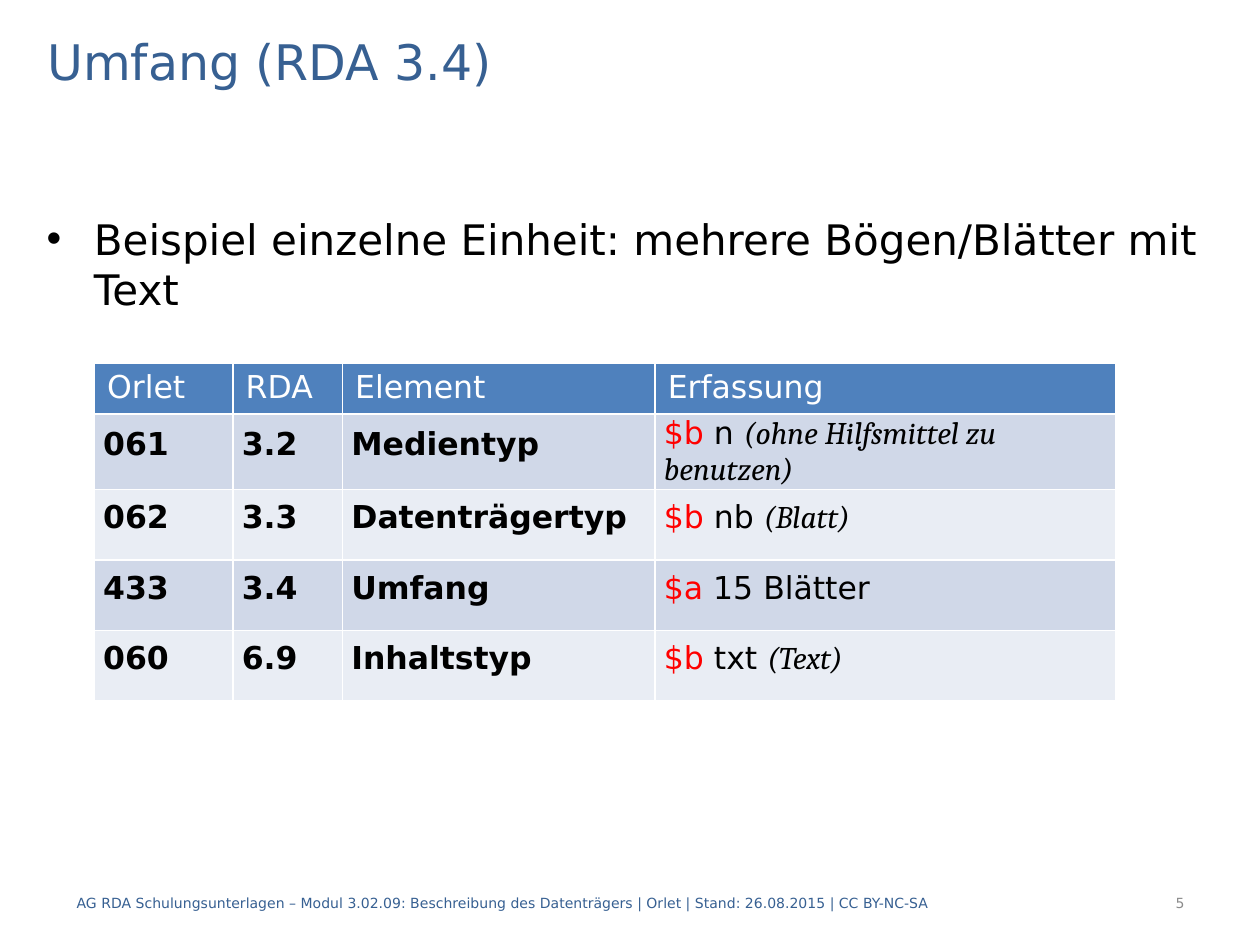
from dataclasses import dataclass

from pptx import Presentation
from pptx.dml.color import RGBColor
from pptx.enum.text import MSO_ANCHOR, PP_ALIGN
from pptx.oxml.ns import qn
from pptx.util import Pt
from lxml import etree

TOP, MIDDLE = MSO_ANCHOR.TOP, MSO_ANCHOR.MIDDLE
LEFT, RIGHT = PP_ALIGN.LEFT, PP_ALIGN.RIGHT


@dataclass(frozen=True)
class Theme:
    """Colours, fonts and type sizes of the slide."""
    font: str = "DejaVu Sans"
    note_font: str = "Cambria"
    title: str = "376092"
    text: str = "000000"
    subfield: str = "FF0000"
    page: str = "8C8C8C"
    white: str = "FFFFFF"
    header: str = "4F81BD"
    bands: tuple = ("D0D8E8", "E9EDF4")
    title_size: int = 28
    body_size: int = 24
    table_size: int = 18
    footer_size: int = 8


THEME = Theme()
COLUMNS = (79.2, 62.6, 178.6, 263.5)
HEADER_HEIGHT, ROW_HEIGHT = 28, 40.3
HEADERS = ("Orlet", "RDA", "Element", "Erfassung")
ROWS = (
    ("061", "3.2", "Medientyp", ("$b", " n ", "(ohne Hilfsmittel zu benutzen)")),
    ("062", "3.3", "Datenträgertyp", ("$b ", "nb ", "(Blatt)")),
    ("433", "3.4", "Umfang", ("$a", " 15 Blätter")),
    ("060", "6.9", "Inhaltstyp", ("$b ", "txt ", "(Text)")),
)


def style_run(r, size, color, font=THEME.font, bold=False, italic=False):
    """Format one run."""
    r.font.size, r.font.name = Pt(size), font
    r.font.bold, r.font.italic = bold, italic
    r.font.color.rgb = RGBColor.from_string(color)


def add_text(s, box, text, size, color, anchor=MIDDLE, align=LEFT):
    """Add a wrapped one-paragraph text box and return its frame."""
    tf = s.shapes.add_textbox(*map(Pt, box)).text_frame
    tf.word_wrap, tf.vertical_anchor = True, anchor
    p = tf.paragraphs[0]
    p.text, p.alignment = text, align
    style_run(p.runs[0], size, color)
    return tf


def add_bullet(p, indent):
    """Give a paragraph a hanging bullet."""
    ppr = p._p.get_or_add_pPr()
    ppr.set("marL", str(Pt(indent)))
    ppr.set("indent", str(-Pt(indent)))
    etree.SubElement(ppr, qn("a:buFont"), typeface="Arial")
    etree.SubElement(ppr, qn("a:buChar"), char="•")


def paint_cell(cell, color):
    """Fill a cell and draw its white borders."""
    tcpr = cell._tc.get_or_add_tcPr()
    for side in ("a:lnL", "a:lnR", "a:lnT", "a:lnB"):
        ln = etree.SubElement(tcpr, qn(side), w=str(Pt(1)))
        fill = etree.SubElement(ln, qn("a:solidFill"))
        etree.SubElement(fill, qn("a:srgbClr"), val=THEME.white)
    cell.fill.solid()
    cell.fill.fore_color.rgb = RGBColor.from_string(color)


def fill_header(cell, text):
    """Write a header cell."""
    paint_cell(cell, THEME.header)
    cell.text_frame.text = text
    style_run(cell.text_frame.paragraphs[0].runs[0], THEME.table_size, THEME.white)


def start_body(cell, band, fixed_line=True):
    """Prepare a body cell and return its paragraph."""
    paint_cell(cell, band)
    cell.vertical_anchor = MIDDLE
    cell.margin_left = cell.margin_right = Pt(5)
    cell.margin_top = cell.margin_bottom = 0
    p = cell.text_frame.paragraphs[0]
    p.space_after = Pt(6)
    if fixed_line:
        p.line_spacing = Pt(13)
    return p


def fill_entry(p, parts):
    """Write subfield code, value and optional italic note."""
    styles = ((THEME.subfield, THEME.font, False), (THEME.text, THEME.font, False),
              (THEME.text, THEME.note_font, True))
    for text, (color, font, italic) in zip(parts, styles):
        r = p.add_run()
        r.text = text
        style_run(r, THEME.table_size, color, font, italic=italic)


def add_elements_table(s, left, top):
    """Add the table of elements and their recorded values."""
    height = HEADER_HEIGHT + ROW_HEIGHT * len(ROWS)
    table = s.shapes.add_table(len(ROWS) + 1, len(COLUMNS), Pt(left), Pt(top),
                               Pt(sum(COLUMNS)), Pt(height)).table
    for column, width in zip(table.columns, COLUMNS):
        column.width = Pt(width)
    for i, row in enumerate(table.rows):
        row.height = Pt(ROW_HEIGHT if i else HEADER_HEIGHT)
    for j, text in enumerate(HEADERS):
        fill_header(table.cell(0, j), text)
    for i, (*labels, entry) in enumerate(ROWS):
        band = THEME.bands[i % 2]
        for j, text in enumerate(labels):
            p = start_body(table.cell(i + 1, j), band)
            p.text = text
            style_run(p.runs[0], THEME.table_size, THEME.text, bold=True)
        fill_entry(start_body(table.cell(i + 1, len(labels)), band, i > 0), entry)


def main():
    """Build and save the slide."""
    prs = Presentation()
    prs.slide_width, prs.slide_height = Pt(720), Pt(540)
    s = prs.slides.add_slide(prs.slide_layouts[6])
    add_text(s, (20, 14.4, 680.4, 40.3), "Umfang (RDA 3.4)",
             THEME.title_size, THEME.title)
    tf = add_text(s, (19.6, 66.2, 680.4, 430.6),
                  "Beispiel einzelne Einheit: mehrere Bögen/Blätter mit Text",
                  THEME.body_size, THEME.text, TOP)
    tf.margin_top = Pt(55.6)
    add_bullet(tf.paragraphs[0], 27)
    add_elements_table(s, 54, 207.7)
    add_text(s, (36.7, 501.8, 623.5, 28.8),
             "AG RDA Schulungsunterlagen – Modul 3.02.09: Beschreibung des "
             "Datenträgers | Orlet | Stand: 26.08.2015 | CC BY-NC-SA",
             THEME.footer_size, THEME.title)
    add_text(s, (569.5, 501.8, 114.5, 28.8), "5",
             THEME.footer_size, THEME.page, align=RIGHT)
    prs.save("out.pptx")


if __name__ == "__main__":
    main()
